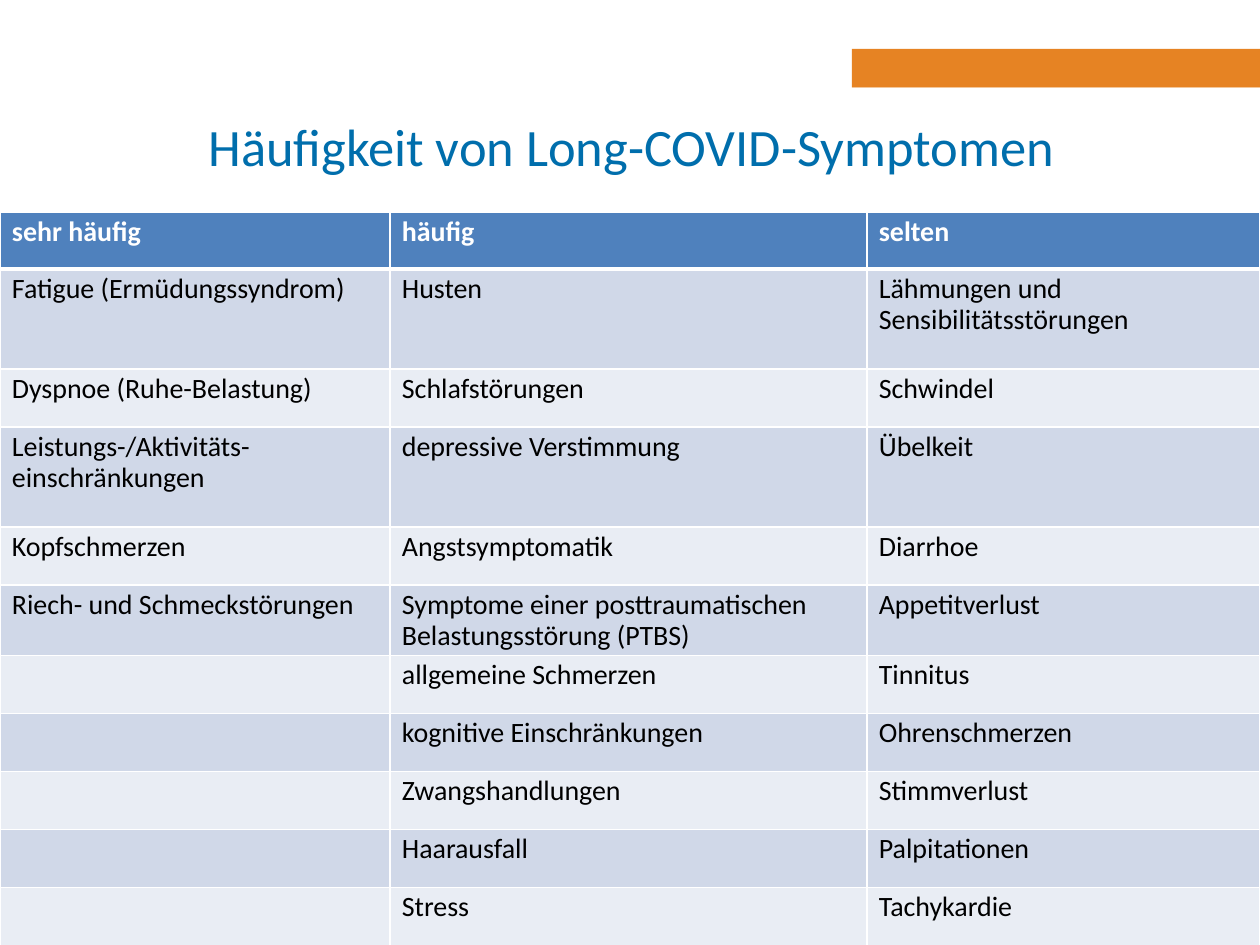
from typing import NamedTuple

from lxml import etree
from pptx import Presentation
from pptx.dml.color import RGBColor
from pptx.enum.shapes import MSO_SHAPE
from pptx.enum.text import MSO_ANCHOR, PP_ALIGN
from pptx.oxml.ns import qn
from pptx.util import Pt

RECT = MSO_SHAPE.RECTANGLE
MIDDLE = MSO_ANCHOR.MIDDLE
LEFT, CENTER = PP_ALIGN.LEFT, PP_ALIGN.CENTER

SCALE = 914400 / 126
FONT = "Calibri"
COLORS = {
    "white": "FFFFFF",
    "black": "000000",
    "orange": "E68323",
    "title": "006EAC",
    "head": "4F81BD",
    "dark": "D0D8E8",
    "light": "E9EDF4",
}


class Box(NamedTuple):
    left: int
    top: int
    width: int
    height: int


class Band(NamedTuple):
    box: Box
    color: str
    alpha: int


class Entry(NamedTuple):
    often: str
    common: str
    rare: str
    height: int = 58


BANDS = [
    Band(Box(852, 49, 408, 39), "orange", 100),
    Band(Box(0, 87, 1260, 117), "white", 55),
]
TITLE = Box(186, 87, 891, 117)
ORIGIN = (0, 212)
WIDTHS = [390, 477, 393]
ENTRIES = [
    Entry("sehr häufig", "häufig", "selten", 57),
    Entry("Fatigue (Ermüdungssyndrom)", "Husten",
          "Lähmungen und Sensibilitätsstörungen", 100),
    Entry("Dyspnoe (Ruhe-Belastung)", "Schlafstörungen", "Schwindel"),
    Entry("Leistungs-/Aktivitäts-einschränkungen", "depressive Verstimmung",
          "Übelkeit", 100),
    Entry("Kopfschmerzen", "Angstsymptomatik", "Diarrhoe"),
    Entry("Riech- und Schmeckstörungen",
          "Symptome einer posttraumatischen Belastungsstörung (PTBS)",
          "Appetitverlust", 70),
    Entry("", "allgemeine Schmerzen", "Tinnitus"),
    Entry("", "kognitive Einschränkungen", "Ohrenschmerzen"),
    Entry("", "Zwangshandlungen", "Stimmverlust"),
    Entry("", "Haarausfall", "Palpitationen"),
    Entry("", "Stress", "Tachykardie"),
]


def px(size: int) -> int:
    return round(size * SCALE)


def place(box: Box) -> list[int]:
    return [px(side) for side in box]


def rgb(name: str) -> RGBColor:
    return RGBColor.from_string(COLORS[name])


def write(frame, text: str, *, size: int, color: str, bold: bool = False,
          align=LEFT, space: float = 1.0) -> None:
    para = frame.paragraphs[0]
    para.alignment = align
    para.line_spacing = space
    run = para.add_run()
    run.text = text
    run.font.name = FONT
    run.font.size = Pt(size)
    run.font.bold = bold
    run.font.color.rgb = rgb(color)


def draw_band(slide, band: Band) -> None:
    shape = slide.shapes.add_shape(RECT, *place(band.box))
    shape.shadow.inherit = False
    shape.line.fill.background()
    shape.fill.solid()
    shape.fill.fore_color.rgb = rgb(band.color)
    if band.alpha < 100:
        tint = shape.fill._xPr.find(".//" + qn("a:srgbClr"))
        etree.SubElement(tint, qn("a:alpha"), val=str(band.alpha * 1000))


def draw_title(slide, text: str) -> None:
    frame = slide.shapes.add_textbox(*place(TITLE)).text_frame
    frame.word_wrap = True
    frame.vertical_anchor = MIDDLE
    write(frame, text, size=30, color="title", align=CENTER)


def edge(cell, top: int, bottom: int) -> None:
    props = cell._tc.get_or_add_tcPr()
    sides = {"L": 1, "R": 1, "T": top, "B": bottom}
    for spot, (side, width) in enumerate(sides.items()):
        line = etree.Element(qn(f"a:ln{side}"), w=str(Pt(width)))
        fill = etree.SubElement(line, qn("a:solidFill"))
        etree.SubElement(fill, qn("a:srgbClr"), val=COLORS["white"])
        props.insert(spot, line)


def draw_cell(cell, text: str, row: int) -> None:
    head = row == 0
    cell.margin_left = cell.margin_right = px(12)
    cell.margin_top = cell.margin_bottom = px(5)
    cell.fill.solid()
    cell.fill.fore_color.rgb = rgb(
        "head" if head else "dark" if row % 2 else "light")
    edge(cell, top=3 if row == 1 else 1, bottom=3 if head else 1)
    if text:
        write(cell.text_frame, text, size=16, bold=head, space=0.9,
              color="white" if head else "black")


def draw_table(slide, entries: list[Entry]) -> None:
    box = Box(*ORIGIN, sum(WIDTHS), sum(item.height for item in entries))
    table = slide.shapes.add_table(
        len(entries), len(WIDTHS), *place(box)).table
    for col, width in zip(table.columns, WIDTHS):
        col.width = px(width)
    for row, item in enumerate(entries):
        table.rows[row].height = px(item.height)
        for col, text in enumerate((item.often, item.common, item.rare)):
            draw_cell(table.cell(row, col), text, row)


def main() -> None:
    deck = Presentation()
    deck.slide_width, deck.slide_height = px(1260), px(945)
    slide = deck.slides.add_slide(deck.slide_layouts[6])
    for band in BANDS:
        draw_band(slide, band)
    draw_title(slide, "Häufigkeit von Long-COVID-Symptomen")
    draw_table(slide, ENTRIES)
    deck.save("out.pptx")


if __name__ == "__main__":
    main()
